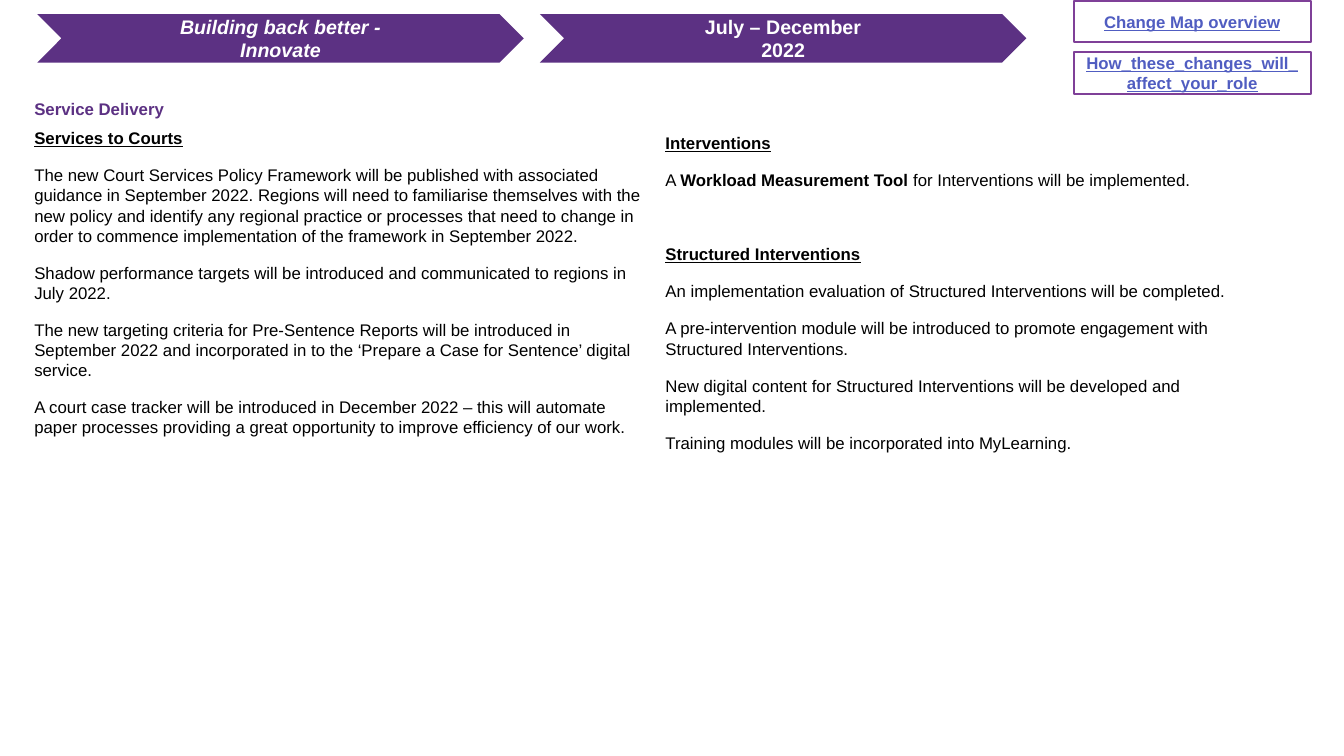
from lxml import etree
from pptx import Presentation
from pptx.dml.color import RGBColor
from pptx.enum.shapes import MSO_SHAPE
from pptx.enum.text import MSO_ANCHOR, MSO_AUTO_SIZE, PP_ALIGN
from pptx.oxml.ns import qn
from pptx.util import Inches, Pt

CHEVRON, RECT = MSO_SHAPE.CHEVRON, MSO_SHAPE.RECTANGLE
TOP, MIDDLE = MSO_ANCHOR.TOP, MSO_ANCHOR.MIDDLE
LEFT, CENTER = PP_ALIGN.LEFT, PP_ALIGN.CENTER
FIXED = MSO_AUTO_SIZE.NONE

PURPLE = RGBColor(0x5C, 0x31, 0x83)
BORDER = RGBColor(0x7F, 0x40, 0x98)
LINK = RGBColor(0x50, 0x5D, 0xC1)
WHITE = RGBColor(0xFF, 0xFF, 0xFF)
BLACK = RGBColor(0, 0, 0)

COURTS = [
    ("Services to Courts", True),
    ("The new Court Services Policy Framework will be published with associated "
     "guidance in September 2022. Regions will need to familiarise themselves with "
     "the new policy and identify any regional practice or processes that need to "
     "change in order to commence implementation of the framework in September 2022.",
     False),
    ("Shadow performance targets will be introduced and communicated to regions in "
     "July 2022.", False),
    ("The new targeting criteria for Pre-Sentence Reports will be introduced in "
     "September 2022 and incorporated in to the ‘Prepare a Case for Sentence’ "
     "digital service.", False),
    ("A court case tracker will be introduced in December 2022 – this will automate "
     "paper processes providing a great opportunity to improve efficiency of our work.",
     False),
]
COURSES = [
    ("Interventions", True),
    ("A |Workload Measurement Tool| for Interventions will be implemented.", False),
    ("Structured Interventions", True),
    ("An implementation evaluation of Structured Interventions will be completed.",
     False),
    ("A pre-intervention module will be introduced to promote engagement with "
     "Structured Interventions.", False),
    ("New digital content for Structured Interventions will be developed and "
     "implemented.", False),
    ("Training modules will be incorporated into MyLearning.", False),
]


def style(run, size, color, bold=True, italic=False, under=False):
    font = run.font
    font.name, font.size = "Arial", Pt(size)
    font.bold, font.italic, font.underline = bold, italic, under
    font.color.rgb = color


def place(shape, box):
    shape.left, shape.top, shape.width, shape.height = map(Inches, box)
    frame = shape.text_frame
    frame.word_wrap = True
    frame.auto_size = FIXED
    frame.vertical_anchor = TOP
    return frame


def label(slide, kind, box, text, size, color, italic=False, under=False):
    shape = slide.shapes.add_shape(kind, *map(Inches, box))
    shape.shadow.inherit = False
    frame = shape.text_frame
    frame.word_wrap = True
    frame.vertical_anchor = MIDDLE
    frame.text = text
    for para in frame.paragraphs:
        para.alignment = CENTER
        for run in para.runs:
            style(run, size, color, italic=italic, under=under)
    return shape


def banner(slide, box):
    left, top, width, height = box
    gap = 0.16
    step = (width + gap) / 2
    names = [("Building back better -\nInnovate", True), ("July – December\n2022", False)]
    for i, (text, italic) in enumerate(names):
        spot = (left + i * step, top, step - gap, height)
        arrow = label(slide, CHEVRON, spot, text, 14, WHITE, italic=italic)
        arrow.fill.solid()
        arrow.fill.fore_color.rgb = PURPLE
        arrow.line.fill.background()


def links(slide, box):
    left, top, width, height = box
    gap = 0.1
    step = (height + gap) / 2
    names = ["Change Map overview", "How_these_changes_will_affect_your_role"]
    for i, text in enumerate(names):
        spot = (left, top + i * step, width, step - gap)
        button = label(slide, RECT, spot, text, 12, LINK, under=True)
        button.fill.background()
        button.line.color.rgb = BORDER
        button.line.width = Pt(1.5)


def heading(shape, box):
    frame = place(shape, box)
    frame.text = "Service Delivery"
    para = frame.paragraphs[0]
    para.alignment = LEFT
    style(para.runs[0], 12, PURPLE)


def column(shape, box, items):
    frame = place(shape, box)
    for i, (text, head) in enumerate(items):
        para = frame.add_paragraph() if i else frame.paragraphs[0]
        props = para._p.get_or_add_pPr()
        props.set("marL", "0")
        props.set("indent", "0")
        etree.SubElement(props, qn("a:buNone"))
        para.alignment = LEFT
        para.space_before = Pt(0 if i == 0 else 32.5 if head else 6)
        para.space_after = Pt(6)
        for j, part in enumerate(text.split("|")):
            run = para.add_run()
            run.text = part
            style(run, 12, BLACK, bold=head or j == 1, under=head)


def main():
    deck = Presentation()
    deck.slide_width, deck.slide_height = Inches(13.33), Inches(7.5)
    slide = deck.slides.add_slide(deck.slide_layouts[3])
    title, left, right = slide.placeholders
    banner(slide, (0.37, 0.14, 9.81, 0.48))
    heading(title, (0.24, 0.93, 6.26, 0.29))
    column(left, (0.24, 1.22, 6.26, 3.3), COURTS)
    column(right, (6.5, 1.27, 6.26, 3.4), COURSES)
    links(slide, (10.65, 0.01, 2.35, 0.92))
    deck.save("out.pptx")


if __name__ == "__main__":
    main()
